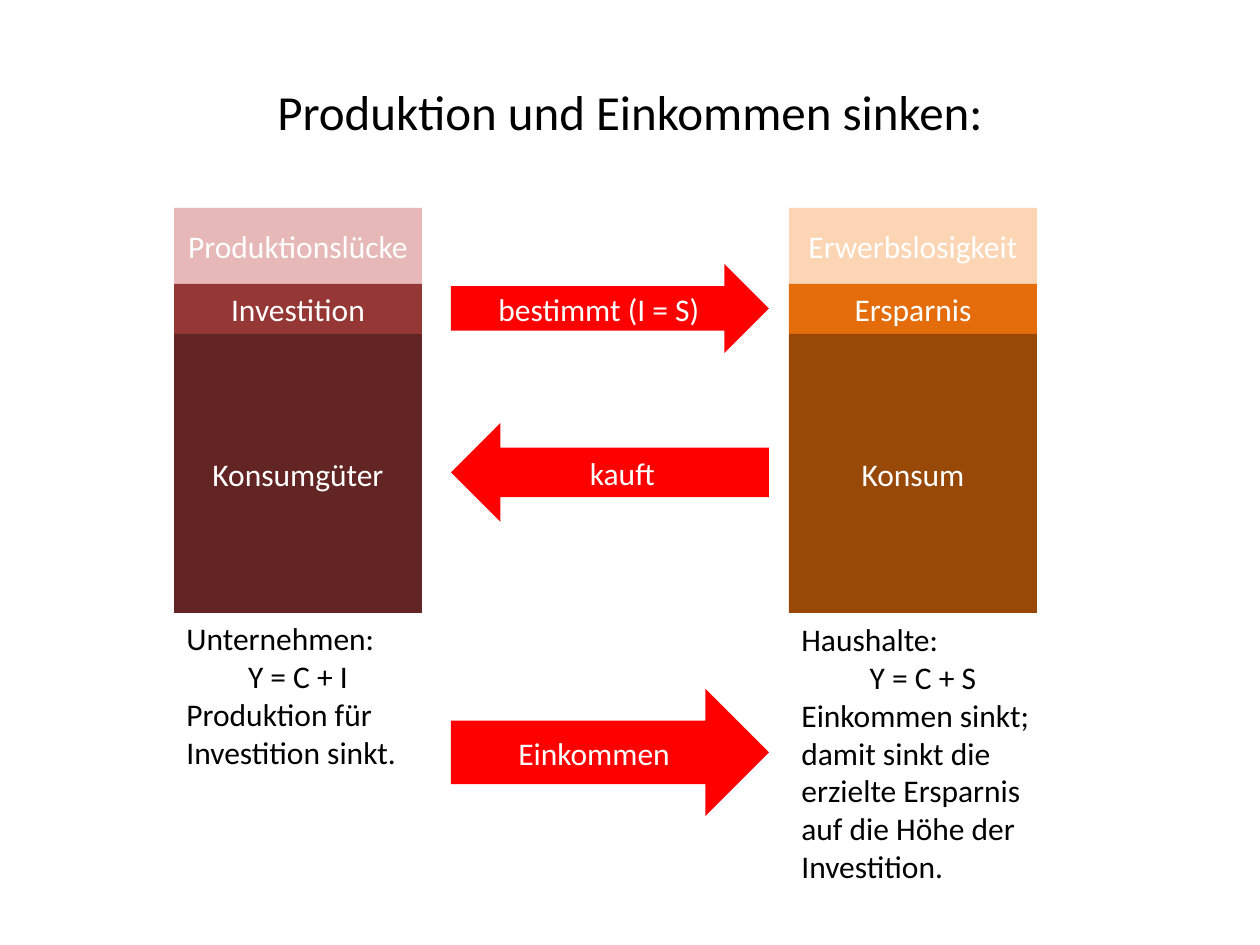
from dataclasses import dataclass

from pptx import Presentation
from pptx.dml.color import RGBColor
from pptx.enum.shapes import MSO_SHAPE
from pptx.enum.text import MSO_ANCHOR, MSO_AUTO_SIZE, PP_ALIGN
from pptx.slide import Slide
from pptx.text.text import TextFrame
from pptx.util import Emu, Pt

PX_PER_INCH = 126


def px(n: int) -> Emu:
    return Emu(round(n * 914400 / PX_PER_INCH))


@dataclass(frozen=True)
class Theme:
    font: str = "Calibri"
    title_size: int = 28
    body_size: int = 18
    dark: str = "000000"
    light: str = "FFFFFF"
    arrow: str = "FF0000"


@dataclass(frozen=True)
class Line:
    text: str
    align: PP_ALIGN = PP_ALIGN.LEFT


@dataclass(frozen=True)
class Column:
    left: int
    labels: tuple[str, str, str]
    colors: tuple[str, str, str]
    note_top: int
    note_width: int
    note_height: int
    note: tuple[Line, ...]


@dataclass(frozen=True)
class Arrow:
    kind: MSO_SHAPE
    top: int
    height: int
    label: str


THEME = Theme()
STACK_TOP = 208
STACK_HEIGHTS = (76, 50, 279)
COLUMN_WIDTH = 248
ARROW_LEFT, ARROW_WIDTH = 451, 318

COLUMNS = (
    Column(174, ("Produktionslücke", "Investition", "Konsumgüter"),
           ("E6B9B8", "953735", "632523"), 613, 248, 165,
           (Line("Unternehmen:"), Line("Y = C + I", PP_ALIGN.CENTER),
            Line("Produktion für Investition sinkt."))),
    Column(789, ("Erwerbslosigkeit", "Ersparnis", "Konsum"),
           ("FCD5B5", "E46C0A", "984807"), 614, 268, 280,
           (Line("Haushalte:"), Line("Y = C + S", PP_ALIGN.CENTER),
            Line("Einkommen sinkt; damit sinkt die erzielte Ersparnis "
                 "auf die Höhe der Investition."))),
)

ARROWS = (
    Arrow(MSO_SHAPE.RIGHT_ARROW, 264, 89, "bestimmt (I = S)"),
    Arrow(MSO_SHAPE.LEFT_ARROW, 423, 99, "kauft"),
    Arrow(MSO_SHAPE.RIGHT_ARROW, 689, 127, "Einkommen"),
)


def write(tf: TextFrame, lines: tuple[Line, ...], size: int, color: str) -> None:
    tf.word_wrap = True
    for i, line in enumerate(lines):
        p = tf.add_paragraph() if i else tf.paragraphs[0]
        p.text = line.text
        p.alignment = line.align
        p.font.name = THEME.font
        p.font.size = Pt(size)
        p.font.color.rgb = RGBColor.from_string(color)


def add_title(s: Slide, text: str) -> None:
    sp = s.shapes.title
    sp.left, sp.top, sp.width, sp.height = px(63), px(26), px(1134), px(169)
    sp.text_frame.vertical_anchor = MSO_ANCHOR.MIDDLE
    write(sp.text_frame, (Line(text, PP_ALIGN.CENTER),), THEME.title_size, THEME.dark)


def add_block(s: Slide, kind: MSO_SHAPE, left: int, top: int, width: int,
              height: int, fill: str, label: str) -> None:
    sp = s.shapes.add_shape(kind, px(left), px(top), px(width), px(height))
    sp.shadow.inherit = False
    sp.fill.solid()
    sp.fill.fore_color.rgb = RGBColor.from_string(fill)
    sp.line.fill.background()
    sp.text_frame.vertical_anchor = MSO_ANCHOR.MIDDLE
    write(sp.text_frame, (Line(label, PP_ALIGN.CENTER),), THEME.body_size, THEME.light)


def add_column(s: Slide, col: Column) -> None:
    top = STACK_TOP
    for label, color, height in zip(col.labels, col.colors, STACK_HEIGHTS):
        add_block(s, MSO_SHAPE.RECTANGLE, col.left, top, COLUMN_WIDTH, height, color, label)
        top += height
    sp = s.shapes.add_textbox(px(col.left), px(col.note_top),
                              px(col.note_width), px(col.note_height))
    sp.text_frame.auto_size = MSO_AUTO_SIZE.SHAPE_TO_FIT_TEXT
    write(sp.text_frame, col.note, THEME.body_size, THEME.dark)


def main() -> None:
    prs = Presentation()
    prs.slide_width, prs.slide_height = px(1260), px(945)
    s = prs.slides.add_slide(prs.slide_layouts.get_by_name("Title Only"))
    add_title(s, "Produktion und Einkommen sinken:")
    for col in COLUMNS:
        add_column(s, col)
    for arrow in ARROWS:
        add_block(s, arrow.kind, ARROW_LEFT, arrow.top, ARROW_WIDTH,
                  arrow.height, THEME.arrow, arrow.label)
    prs.save("out.pptx")


if __name__ == "__main__":
    main()
